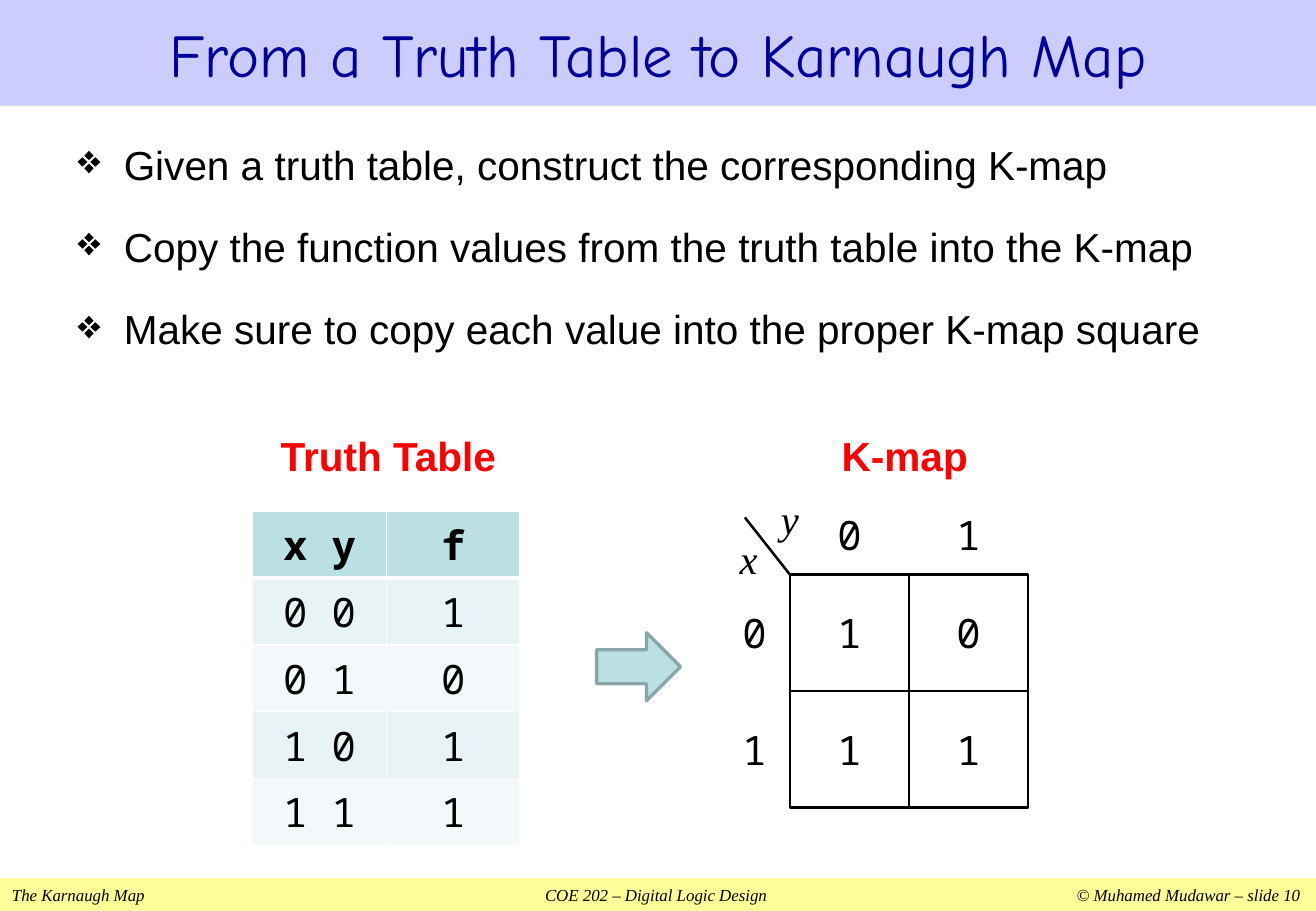
from dataclasses import dataclass
from typing import Optional

from lxml.etree import SubElement
from pptx import Presentation
from pptx.dml.color import RGBColor
from pptx.enum.shapes import MSO_CONNECTOR, MSO_SHAPE
from pptx.enum.text import MSO_ANCHOR as ANCHOR, PP_ALIGN as ALIGN
from pptx.oxml.ns import qn
from pptx.util import Inches, Pt


@dataclass(frozen=True)
class Theme:
    black: str = "000000"
    white: str = "FFFFFF"
    navy: str = "000099"
    lilac: str = "CCCCFF"
    yellow: str = "FFFF99"
    red: str = "FF0000"
    teal: str = "BBE0E3"
    teal_edge: str = "8AA6A8"
    bands: tuple[str, str] = ("E7F3F4", "F3F9FA")
    sans: str = "Arial"
    serif: str = "Times New Roman"
    mono: str = "Noto Sans Mono"
    hand: str = "Comic Neue"
    title_size: int = 36
    text_size: int = 24
    footer_size: int = 10


@dataclass(frozen=True)
class Box:
    x: float
    y: float
    w: float
    h: float


@dataclass(frozen=True)
class Label:
    text: str
    box: Box
    font: str
    color: str = Theme.black
    bold: bool = False
    italic: bool = False
    framed: bool = False


T = Theme()
SLIDE_W, SLIDE_H = 10.83, 7.5

BULLETS = (
    "Given a truth table, construct the corresponding K-map",
    "Copy the function values from the truth table into the K-map",
    "Make sure to copy each value into the proper K-map square",
)
TRUTH_ROWS = (("x y", "f"), ("0 0", "1"), ("0 1", "0"), ("1 0", "1"), ("1 1", "1"))
COL_W, ROW_H = 1.1, 0.55

# K-map grid: values indexed by x (row) and y (column)
KMAP = (("1", "0"), ("1", "1"))
MAP_X, MAP_Y, CELL_W, CELL_H = 6.5, 4.73, 0.98, 0.96
SIDE_W, HEAD_H = 0.58, 0.66


def rgb(value: str) -> RGBColor:
    return RGBColor.from_string(value)


def write(p, text: str, *, font: str = T.sans, size: int = T.text_size,
          color: str = T.black, bold: bool = False, italic: bool = False,
          align: ALIGN = ALIGN.LEFT) -> None:
    p.alignment = align
    r = p.add_run()
    r.text = text
    r.font.name, r.font.size = font, Pt(size)
    r.font.bold, r.font.italic = bold, italic
    r.font.color.rgb = rgb(color)


def add_shape(s, kind: MSO_SHAPE, box: Box, fill: Optional[str] = None,
              line: Optional[str] = None, width: float = 1.5):
    sp = s.shapes.add_shape(kind, Inches(box.x), Inches(box.y), Inches(box.w), Inches(box.h))
    sp.shadow.inherit = False
    if fill:
        sp.fill.solid()
        sp.fill.fore_color.rgb = rgb(fill)
    else:
        sp.fill.background()
    if line:
        sp.line.color.rgb = rgb(line)
        sp.line.width = Pt(width)
    else:
        sp.line.fill.background()
    return sp


def add_text_box(s, box: Box):
    return s.shapes.add_textbox(Inches(box.x), Inches(box.y), Inches(box.w), Inches(box.h))


def add_label(s, label: Label) -> None:
    if label.framed:
        sp = add_shape(s, MSO_SHAPE.RECTANGLE, label.box, line=T.black)
    else:
        sp = add_text_box(s, label.box)
    tf = sp.text_frame
    tf.word_wrap = True
    tf.vertical_anchor = ANCHOR.MIDDLE
    tf.margin_left = tf.margin_right = tf.margin_top = tf.margin_bottom = 0
    write(tf.paragraphs[0], label.text, font=label.font, color=label.color,
          bold=label.bold, italic=label.italic, align=ALIGN.CENTER)


def add_footer(s) -> None:
    sp = add_shape(s, MSO_SHAPE.RECTANGLE, Box(0, 7.23, SLIDE_W, 0.27), T.yellow)
    tf = sp.text_frame
    tf.vertical_anchor = ANCHOR.TOP
    p = tf.paragraphs[0]
    write(p, "The Karnaugh Map\tCOE 202 – Digital Logic Design\t© Muhamed Mudawar – slide 10",
          font=T.serif, size=T.footer_size, italic=True)
    tabs = SubElement(p._p.get_or_add_pPr(), qn("a:tabLst"))
    for pos, algn in ((5.3, "ctr"), (10.6, "r")):
        SubElement(tabs, qn("a:tab"), pos=str(Inches(pos)), algn=algn)


def add_title(s) -> None:
    sp = add_shape(s, MSO_SHAPE.RECTANGLE, Box(0, 0, SLIDE_W, 0.87), T.lilac)
    write(sp.text_frame.paragraphs[0], "From a Truth Table to Karnaugh Map",
          font=T.hand, size=T.title_size, color=T.navy, align=ALIGN.CENTER)


def add_bullets(s) -> None:
    tf = add_text_box(s, Box(0.54, 1.1, 9.75, 2.27)).text_frame
    tf.word_wrap = True
    for i, text in enumerate(BULLETS):
        p = tf.add_paragraph() if i else tf.paragraphs[0]
        write(p, text)
        p.space_before = Pt(20)
        pPr = p._p.get_or_add_pPr()
        pPr.set("marL", str(Inches(0.38)))
        pPr.set("indent", str(-Inches(0.38)))
        SubElement(pPr, qn("a:buChar"), char="❖")


def set_borders(cell, top: float, bottom: float) -> None:
    tcPr = cell._tc.get_or_add_tcPr()
    for side, width in (("L", 1), ("R", 1), ("T", top), ("B", bottom)):
        ln = SubElement(tcPr, qn(f"a:ln{side}"), w=str(Pt(width)))
        SubElement(SubElement(ln, qn("a:solidFill")), qn("a:srgbClr"), val=T.white)


def add_truth_table(s) -> None:
    rows, cols = len(TRUTH_ROWS), len(TRUTH_ROWS[0])
    table = s.shapes.add_table(rows, cols, Inches(2.08), Inches(4.21),
                               Inches(cols * COL_W), Inches(rows * ROW_H)).table
    table.first_row = table.horz_banding = False
    for i, values in enumerate(TRUTH_ROWS):
        header = i == 0
        for j, text in enumerate(values):
            cell = table.cell(i, j)
            set_borders(cell, top=3 if i == 1 else 1, bottom=3 if header else 1)
            cell.fill.solid()
            cell.fill.fore_color.rgb = rgb(T.teal if header else T.bands[(i - 1) % 2])
            write(cell.text_frame.paragraphs[0], text, font=T.mono, bold=header,
                  align=ALIGN.CENTER)


def add_kmap(s) -> None:
    for i, values in enumerate(KMAP):
        x, y = MAP_X + i * CELL_W, MAP_Y + i * CELL_H
        add_label(s, Label(str(i), Box(MAP_X - SIDE_W, y, SIDE_W, CELL_H), T.mono))
        add_label(s, Label(str(i), Box(x, MAP_Y - HEAD_H, CELL_W, HEAD_H), T.mono))
        for j, text in enumerate(values):
            box = Box(MAP_X + j * CELL_W, y, CELL_W, CELL_H)
            add_label(s, Label(text, box, T.mono, framed=True))

    # Diagonal between the variable names
    line = s.shapes.add_connector(MSO_CONNECTOR.STRAIGHT, Inches(6.13), Inches(4.26),
                                  Inches(MAP_X), Inches(MAP_Y))
    line.line.color.rgb = rgb(T.black)
    line.line.width = Pt(1.5)
    SubElement(line._element.spPr, qn("a:effectLst"))
    add_label(s, Label("x", Box(6.05, 4.35, 0.22, 0.5), T.serif, italic=True))
    add_label(s, Label("y", Box(6.39, 4.02, 0.22, 0.5), T.serif, italic=True))


def main() -> None:
    prs = Presentation()
    prs.slide_width, prs.slide_height = Inches(SLIDE_W), Inches(SLIDE_H)
    s = prs.slides.add_slide(prs.slide_layouts[6])
    # Frame and body text
    add_footer(s)
    add_title(s)
    add_bullets(s)
    # Truth table, arrow and K-map
    add_truth_table(s)
    add_kmap(s)
    for text, box in (("Truth Table", Box(2.2, 3.5, 1.99, 0.5)),
                      ("K-map", Box(6.82, 3.5, 1.25, 0.5))):
        add_label(s, Label(text, box, T.sans, T.red, bold=True))
    add_shape(s, MSO_SHAPE.RIGHT_ARROW, Box(4.91, 5.21, 0.69, 0.56), T.teal, T.teal_edge, 2)
    prs.save("out.pptx")


if __name__ == "__main__":
    main()
